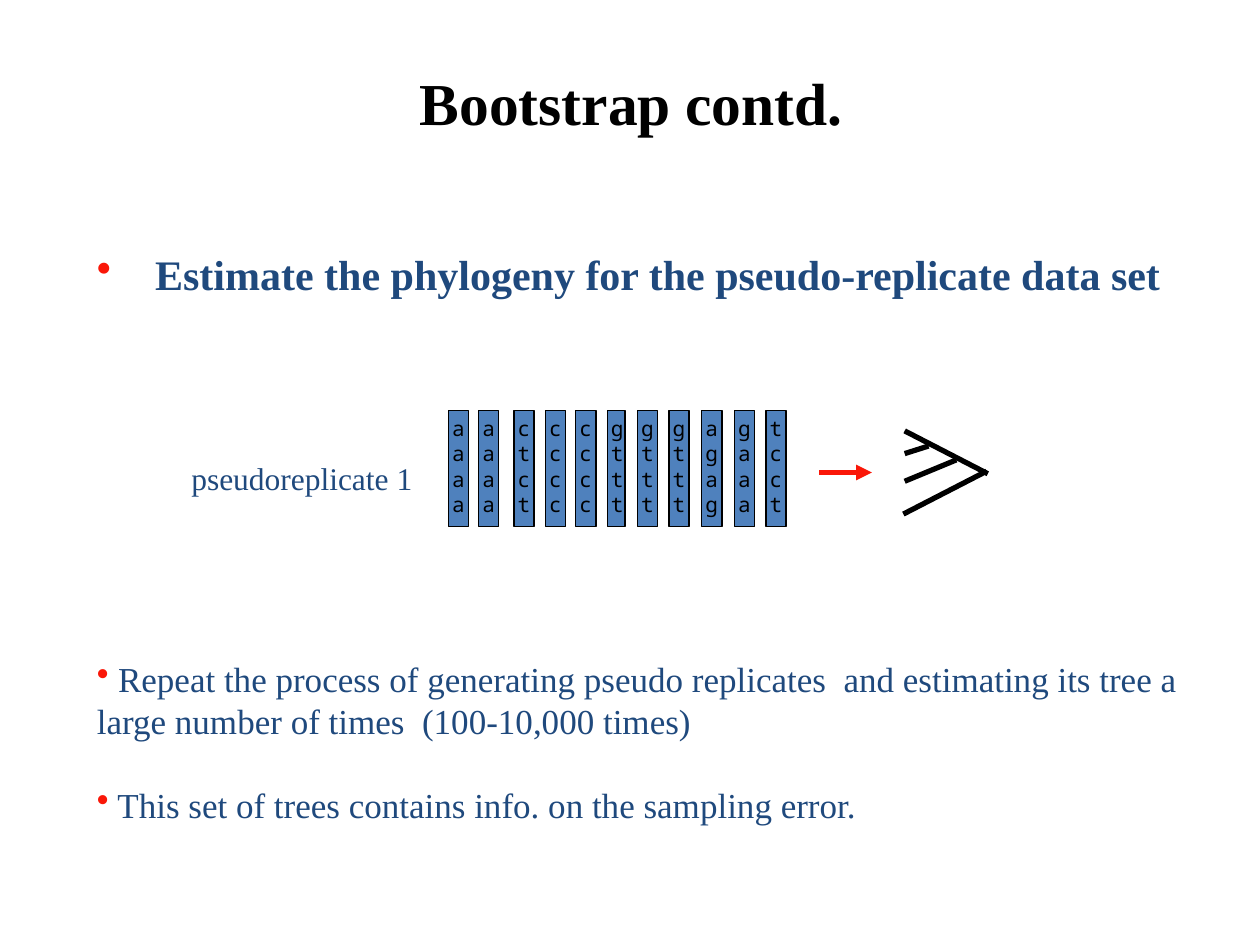
from dataclasses import dataclass

from lxml import etree
from pptx import Presentation
from pptx.dml.color import RGBColor
from pptx.enum import shapes as kinds, text as styles
from pptx.oxml import ns
from pptx.util import Inches, Pt


@dataclass(frozen=True)
class Theme:
    black: str = "000000"
    navy: str = "1F497D"
    blue: str = "4F81BD"
    red: str = "FA1708"
    serif: str = "Times New Roman"
    mono: str = "Noto Sans Mono"
    title: int = 34
    head: int = 24
    body: int = 20
    label: int = 18
    base: int = 12
    thin: float = 0.75
    thick: float = 3


THEME = Theme()

# Left edge of each alignment site and its bases, top to bottom
SITES = [
    (0, "a\na\na\na"), (0.24, "a\na\na\na"), (0.52, "ctct"), (0.77, "cccc"),
    (1.01, "cccc"), (1.26, "gttt"), (1.5, "gttt"), (1.75, "gttt"),
    (2.01, "agag"), (2.27, "gaaa"), (2.52, "tcct"),
]
# Branches of the tree as x1, y1, x2, y2
TREE = [
    (0.01, 0, 0.67, 0.34), (0, 0.66, 0.66, 0.32),
    (0.01, 0.4, 0.42, 0.23), (0.01, 0.18, 0.2, 0.12),
]


def color(code):
    return RGBColor.from_string(code)


def add_text(parent, box, lines, size, shade, font=THEME.serif,
             bold=False, wrap=True, pitch=None):
    frame = parent.add_textbox(*map(Inches, box)).text_frame
    frame.word_wrap = wrap
    for i, line in enumerate(lines):
        para = frame.paragraphs[0] if i == 0 else frame.add_paragraph()
        if pitch:
            para.line_spacing = Pt(pitch)
        run = para.add_run()
        run.text = line
        run.font.size, run.font.name, run.font.bold = Pt(size), font, bold
        run.font.color.rgb = color(shade)
    return frame


def add_bullet(para, hang=0):
    props = para._p.get_or_add_pPr()
    props.set("marL", str(Inches(hang)))
    props.set("indent", str(-Inches(hang)))
    tint = etree.SubElement(props, ns.qn("a:buClr"))
    etree.SubElement(tint, ns.qn("a:srgbClr"), val=THEME.red)
    etree.SubElement(props, ns.qn("a:buChar"), char="•")


def add_line(parent, start, end, shade, arrow=False):
    line = parent.add_connector(kinds.MSO_CONNECTOR.STRAIGHT,
                                *map(Inches, start + end))
    line.line.color.rgb = color(shade)
    line.line.width = Pt(THEME.thick)
    if arrow:
        etree.SubElement(line.line._get_or_add_ln(), ns.qn("a:tailEnd"),
                         type="triangle")
    etree.SubElement(line._element.spPr, ns.qn("a:effectLst"))


def add_title(slide, box):
    frame = add_text(slide.shapes, box, ["Bootstrap contd."], THEME.title,
                     THEME.black, bold=True)
    frame.vertical_anchor = styles.MSO_ANCHOR.MIDDLE
    frame.paragraphs[0].alignment = styles.PP_ALIGN.CENTER


def add_head(slide, box):
    frame = add_text(
        slide.shapes, box,
        [" Estimate the phylogeny for the pseudo-replicate data set"],
        THEME.head, THEME.navy, bold=True)
    add_bullet(frame.paragraphs[0], 0.38)


def add_sites(slide, box):
    """Label and aligned columns; the box spans both."""
    left, top, width, height = box
    group = slide.shapes.add_group_shape().shapes
    first = left + 2.14
    for shift, bases in SITES:
        x = first + shift
        thin = 0.14 if shift == 1.26 else 0.16
        bar = group.add_shape(kinds.MSO_SHAPE.RECTANGLE, Inches(x),
                              Inches(top), Inches(thin), Inches(height))
        bar.shadow.inherit = False
        bar.fill.solid()
        bar.fill.fore_color.rgb = color(THEME.blue)
        bar.line.color.rgb = color(THEME.black)
        bar.line.width = Pt(THEME.thin)
        lines = bases.split("\n")
        single = len(lines) == 1
        # The narrow box wraps a single run to one base per line
        add_text(group, (x - 0.07, top - 0.01, 0.25 if single else 0.3, 0.9),
                 lines, THEME.base, THEME.black, THEME.mono,
                 wrap=single, pitch=1.2 * THEME.base)
    add_text(group, (left, top + 0.33, 1.96, 0.4), ["pseudoreplicate 1"],
             THEME.label, THEME.navy, wrap=False)


def add_tree(slide, box):
    """Arrow from the left side of the box to a tree on its right."""
    left, top, width, height = box
    group = slide.shapes.add_group_shape().shapes
    root = left + width - 0.67
    for x1, y1, x2, y2 in TREE:
        add_line(group, (root + x1, top + y1), (root + x2, top + y2),
                 THEME.black)
    mid = top + height / 2
    add_line(group, (left, mid), (left + 0.42, mid), THEME.red, arrow=True)


def add_notes(slide, box):
    frame = add_text(slide.shapes, box, [
        " Repeat the process of generating pseudo replicates  and estimating "
        "its tree a large number of times  (100-10,000 times)",
        " This set of trees contains info. on the sampling error.",
    ], THEME.body, THEME.navy, pitch=1.2 * THEME.body)
    for para in frame.paragraphs:
        add_bullet(para)
    frame.paragraphs[1].space_before = Pt(1.2 * THEME.body)


def main():
    deck = Presentation()
    deck.slide_width, deck.slide_height = Inches(10), Inches(7.5)
    slide = deck.slides.add_slide(deck.slide_layouts[6])
    add_title(slide, (0.45, 0.32, 9.12, 0.97))
    add_head(slide, (0.67, 1.92, 9, 0.75))
    add_sites(slide, (1.42, 3.26, 4.82, 0.92))
    add_tree(slide, (6.5, 3.42, 1.34, 0.66))
    add_notes(slide, (0.67, 5.17, 8.92, 1.5))
    deck.save("out.pptx")


if __name__ == "__main__":
    main()
